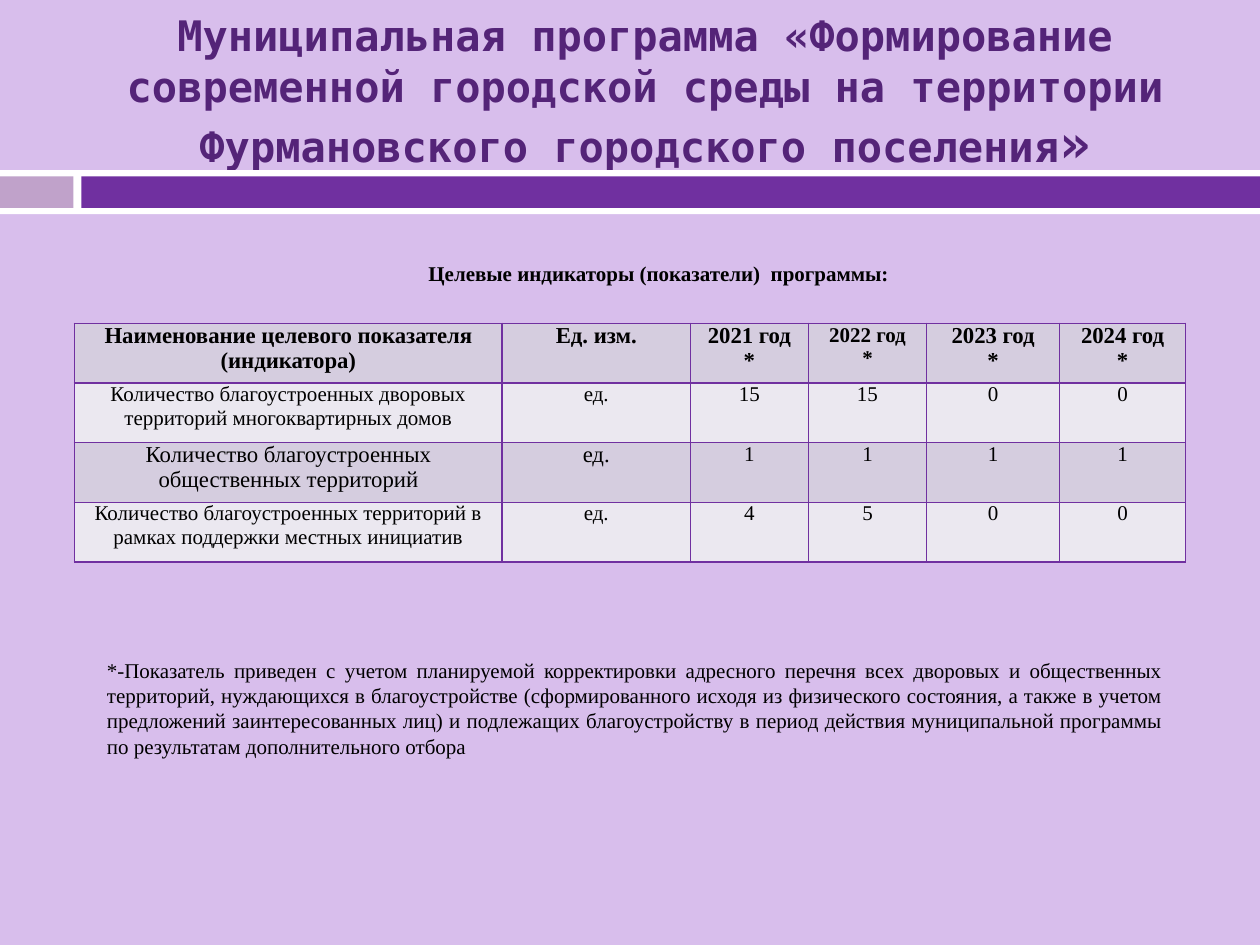
from dataclasses import dataclass

from lxml.etree import SubElement
from pptx import Presentation
from pptx.dml.color import RGBColor
from pptx.enum.shapes import MSO_SHAPE as Shape
from pptx.enum.text import MSO_ANCHOR as Anchor, MSO_AUTO_SIZE as AutoSize, PP_ALIGN as Align
from pptx.oxml.ns import qn
from pptx.util import Pt

LILAC = RGBColor(0xD8, 0xBE, 0xEC)
WHITE = RGBColor(0xFF, 0xFF, 0xFF)
MAUVE = RGBColor(0xC0, 0xA2, 0xCA)
PURPLE = RGBColor(0x70, 0x30, 0xA0)
TITLE_PURPLE = RGBColor(0x54, 0x24, 0x78)
BLACK = RGBColor(0, 0, 0)
DARK_ROW = RGBColor(0xD5, 0xCD, 0xDF)
LIGHT_ROW = RGBColor(0xEB, 0xE8, 0xF0)
TITLE_FONT = "DejaVu Sans Mono"
BODY_FONT = "Times New Roman"


@dataclass
class Area:
    left: float
    top: float
    width: float
    height: float

    def lengths(self) -> tuple:
        return Pt(self.left), Pt(self.top), Pt(self.width), Pt(self.height)


@dataclass
class Band:
    area: Area
    color: RGBColor


@dataclass
class Entry:
    text: str
    size: float = 12


BANDS = [
    Band(Area(0, 97.2, 720, 25.2), WHITE),
    Band(Area(0, 100.8, 42, 18), MAUVE),
    Band(Area(46.5, 100.8, 673.5, 18), PURPLE),
]
COLUMN_WIDTHS = [244.5, 107.5, 67.5, 67.5, 76, 72]
ROW_HEIGHT = 34.1
ROWS = [
    [Entry("Наименование целевого показателя (индикатора)", 13), Entry("Ед. изм.", 13),
     Entry("2021 год\n*", 13), Entry("2022 год\n*"),
     Entry("2023 год\n*", 13), Entry("2024 год\n*", 13)],
    [Entry("Количество благоустроенных дворовых территорий многоквартирных домов"),
     Entry("ед."), Entry("15"), Entry("15"), Entry("0"), Entry("0")],
    [Entry("Количество благоустроенных общественных территорий", 13),
     Entry("ед.", 13), Entry("1"), Entry("1"), Entry("1"), Entry("1")],
    [Entry("Количество благоустроенных территорий в рамках поддержки местных инициатив"),
     Entry("ед."), Entry("4"), Entry("5"), Entry("0"), Entry("0")],
]
TITLE = ("Муниципальная программа «Формирование современной городской среды "
         "на территории Фурмановского городского поселения")
HEADING = "Целевые индикаторы (показатели)  программы:"
FOOTNOTE = ("*-Показатель приведен с учетом планируемой корректировки адресного перечня всех "
            "дворовых и общественных территорий, нуждающихся в благоустройстве (сформированного "
            "исходя из физического состояния, а также в учетом предложений заинтересованных лиц) "
            "и подлежащих благоустройству в период действия муниципальной программы "
            "по результатам дополнительного отбора")


def style_text(frame, size: float, align: Align, bold: bool = False,
               color: RGBColor = BLACK, font_name: str = BODY_FONT) -> None:
    for para in frame.paragraphs:
        para.alignment = align
        for span in para.runs:
            font = span.font
            font.name, font.size, font.bold = font_name, Pt(size), bold
            font.color.rgb = color


def draw_band(page, band: Band) -> None:
    shape = page.shapes.add_shape(Shape.RECTANGLE, *band.area.lengths())
    shape.shadow.inherit = False
    shape.fill.solid()
    shape.fill.fore_color.rgb = band.color
    shape.line.fill.background()


def fill_title(page, area: Area) -> None:
    title = page.shapes.title
    title.left, title.top, title.width, title.height = area.lengths()
    frame = title.text_frame
    frame.auto_size = AutoSize.NONE
    frame.vertical_anchor = Anchor.MIDDLE
    frame.text = TITLE
    closing_quote = frame.paragraphs[0].add_run()
    closing_quote.text = "»"
    style_text(frame, 24, Align.CENTER, True, TITLE_PURPLE, TITLE_FONT)
    closing_quote.font.size = Pt(30)


def draw_text(page, area: Area, text: str, align: Align, bold: bool = False):
    frame = page.shapes.add_textbox(*area.lengths()).text_frame
    frame.word_wrap = True
    frame.text = text
    style_text(frame, 12, align, bold)
    return frame


def draw_borders(cell) -> None:
    properties = cell._tc.get_or_add_tcPr()
    for position, side in enumerate(("lnL", "lnR", "lnT", "lnB")):
        line = SubElement(properties, qn(f"a:{side}"), w=str(Pt(1)))
        fill = SubElement(line, qn("a:solidFill"))
        SubElement(fill, qn("a:srgbClr"), val=str(PURPLE))
        properties.insert(position, line)  # borders come before the cell fill


def draw_table(page, left: float, top: float) -> None:
    area = Area(left, top, sum(COLUMN_WIDTHS), ROW_HEIGHT * len(ROWS))
    table = page.shapes.add_table(len(ROWS), len(COLUMN_WIDTHS), *area.lengths()).table
    for column, width in zip(table.columns, COLUMN_WIDTHS):
        column.width = Pt(width)
    for row_index, entries in enumerate(ROWS):
        table.rows[row_index].height = Pt(ROW_HEIGHT)
        for column_index, entry in enumerate(entries):
            cell = table.cell(row_index, column_index)
            cell.margin_left = cell.margin_right = Pt(5)
            cell.margin_top = cell.margin_bottom = 0
            cell.fill.solid()
            cell.fill.fore_color.rgb = LIGHT_ROW if row_index % 2 else DARK_ROW
            draw_borders(cell)
            cell.text_frame.text = entry.text
            style_text(cell.text_frame, entry.size, Align.CENTER, bold=row_index == 0)


def main() -> None:
    deck = Presentation()
    deck.slide_width, deck.slide_height = Pt(720), Pt(540)
    page = deck.slides.add_slide(deck.slide_layouts[5])  # title only
    page.background.fill.solid()
    page.background.fill.fore_color.rgb = LILAC

    # Header
    for band in BANDS:
        draw_band(page, band)
    fill_title(page, Area(17.3, 21, 702.7, 62.6))

    # Indicators
    heading = draw_text(page, Area(42.5, 145.4, 668, 41.8), HEADING, Align.CENTER, bold=True)
    heading.paragraphs[0].space_before = Pt(7)
    draw_table(page, 42.5, 184.8)

    # Footnote
    footnote = draw_text(page, Area(54, 372.2, 617.8, 65.5), FOOTNOTE, Align.JUSTIFY)
    footnote.auto_size = AutoSize.SHAPE_TO_FIT_TEXT

    deck.save("out.pptx")


if __name__ == "__main__":
    main()
